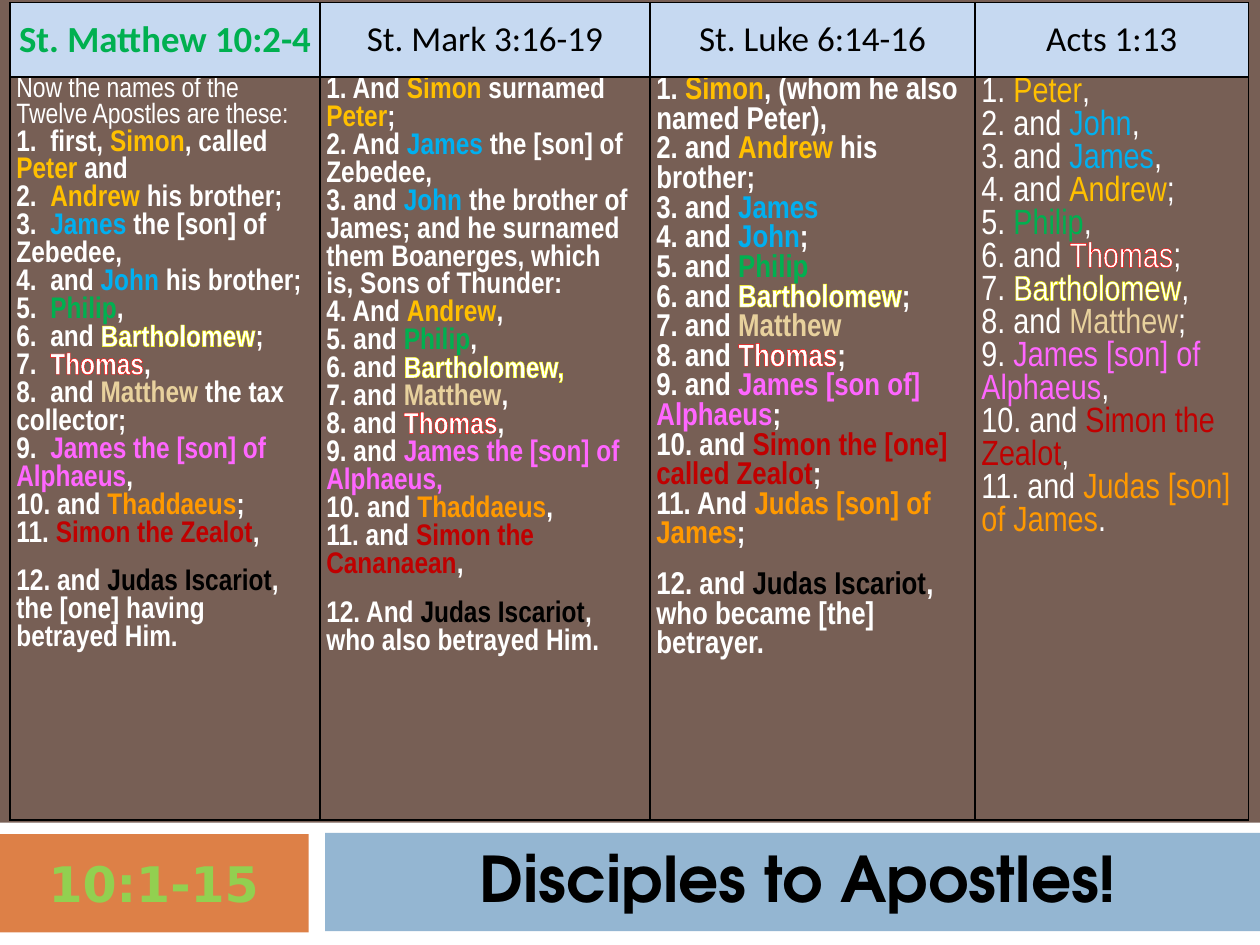
from lxml import etree
from pptx import Presentation
from pptx.dml.color import RGBColor
from pptx.enum import shapes, text
from pptx.oxml import ns
from pptx.util import Inches, Pt

THEME = {
    "background": "775F55", "band": "FFFFFF", "orange_bar": "DD8047", "blue_bar": "94B6D2",
    "header_fill": "C6D9F1", "border": "000000", "dark": "000000", "light": "FFFFFF",
    "lead": "00B050", "lead_outline": "3A5750", "verses": "92D050",
    "title_font": "TeX Gyre Adventor", "header_font": "Calibri",
    "list_font": "Arial Narrow", "verses_font": "DejaVu Sans",
    "title_size": 36, "verses_size": 28, "lead_size": 21, "header_size": 20, "intro_size": 16,
}

TITLE = "Disciples to Apostles!"
VERSES = "10:1-15"
INTRO = "Now the names of the Twelve Apostles are these:"

# (fill, outline, names)
APOSTLE_COLORS = [
    ("FFC000", "FFC000", ["Simon", "Peter", "Andrew"]),
    ("00B0F0", "00B0F0", ["James", "John"]),
    ("00B050", "00B050", ["Philip"]),
    ("FFFFFF", "FFFF00", ["Bartholomew"]),
    ("FFFFFF", "FF0000", ["Thomas"]),
    ("E8D19D", "E8D19D", ["Matthew"]),
    ("FF66FF", None, ["James the [son] of", "James [son of]", "James [son] of", "Alphaeus"]),
    ("FF9900", None, ["Thaddaeus", "Judas [son] of James"]),
    ("C00000", None, ["Simon the Zealot", "Simon the", "Cananaean",
                      "Simon the [one] called Zealot"]),
    ("000000", None, ["Judas Iscariot"]),
]
NAME_STYLE = {name: (fill, outline)
              for fill, outline, names in APOSTLE_COLORS for name in names}

# Braces mark an apostle's name; a leading # marks an automatically numbered line.
GOSPELS = [
    {"heading": "St. Matthew 10:2-4", "width": 2.46, "size": 17, "bold": True, "lines": [
        INTRO,
        "1.  first, {Simon}, called {Peter} and",
        "2.  {Andrew }his brother;",
        "3.  {James }the [son] of",
        "Zebedee,",
        "4.  and {John} his brother;",
        "5.  {Philip},",
        "6.  and {Bartholomew};",
        "#  {Thomas},",
        "#  and {Matthew }the tax",
        "collector;",
        "9.  {James the [son] of}",
        "{Alphaeus},",
        "10. and {Thaddaeus};",
        "11. {Simon the Zealot},",
        "12. and {Judas Iscariot}, the [one] having betrayed Him.",
    ]},
    {"heading": "St. Mark 3:16-19", "width": 2.62, "size": 17, "bold": True, "lines": [
        "1. And {Simon} surnamed",
        "{Peter};",
        "2. And {James} the [son] of",
        "Zebedee,",
        "3. and {John} the brother of",
        "James; and he surnamed",
        "them Boanerges, which",
        "is, Sons of Thunder:",
        "4. And {Andrew},",
        "5. and {Philip},",
        "6. and {Bartholomew,}",
        "7. and {Matthew},",
        "8. and {Thomas},",
        "9. and {James the [son] of}",
        "{Alphaeus,}",
        "10. and {Thaddaeus},",
        "11. and {Simon the}",
        "{Cananaean},",
        "12. And {Judas Iscariot},",
        "who also betrayed Him.",
    ]},
    {"heading": "St. Luke 6:14-16", "width": 2.58, "size": 18, "bold": True, "lines": [
        "1. {Simon}, (whom he also",
        "named Peter),",
        "2. and {Andrew} his brother;",
        "3. and {James}",
        "4. and {John};",
        "5. and {Philip}",
        "6. and {Bartholomew};",
        "7. and {Matthew}",
        "8. and {Thomas};",
        "9. and {James [son of]}",
        "{Alphaeus};",
        "10. and {Simon the [one] called Zealot};",
        "11. And {Judas [son] of James};",
        "12. and {Judas Iscariot}, who became [the] betrayer.",
    ]},
    {"heading": "Acts 1:13", "width": 2.17, "size": 20, "bold": False, "lines": [
        "1. {Peter},",
        "2. and {John},",
        "3. and {James},",
        "4. and {Andrew};",
        "5. {Philip},",
        "6. and {Thomas};",
        "7. {Bartholomew},",
        "8. and {Matthew};",
        "9. {James [son] of}",
        "{Alphaeus},",
        "10. and {Simon the Zealot},",
        "11. and {Judas [son] of James}.",
    ]},
]
ROW_HEIGHTS = [0.59, 5.9]
AUTO_NUMBER_START = 7


def rgb(color):
    return RGBColor.from_string(THEME.get(color, color))


def set_font(font, name, size, color, bold):
    font.name, font.size, font.bold = name, Pt(size), bold
    font.color.rgb = rgb(color)


def add_line(parent, tag, color, width, position=None):
    """Add a solid a:ln-type element, used for text outlines and cell borders."""
    line = etree.Element(ns.qn(tag), w=str(Pt(width)))
    fill = etree.SubElement(line, ns.qn("a:solidFill"))
    etree.SubElement(fill, ns.qn("a:srgbClr"), val=THEME.get(color, color))
    parent.insert(len(parent) if position is None else position, line)


def outline_run(run, color, width=0.75):
    add_line(run.font._element, "a:ln", color, width, 0)


def add_bar(slide, left, top, width, height, color):
    bar = slide.shapes.add_shape(shapes.MSO_SHAPE.RECTANGLE, *map(Inches, (left, top, width, height)))
    bar.shadow.inherit = False
    bar.fill.solid()
    bar.fill.fore_color.rgb = rgb(color)
    bar.line.fill.background()
    return bar


def format_cell(cell):
    cell.margin_left = cell.margin_right = Inches(0.05)
    cell.margin_top = cell.margin_bottom = 0
    cell.fill.background()
    for position, side in enumerate(("a:lnL", "a:lnR", "a:lnT", "a:lnB")):
        add_line(cell._tc.get_or_add_tcPr(), side, "border", 1, position)


def fill_heading(cell, heading, is_lead):
    cell.fill.solid()
    cell.fill.fore_color.rgb = rgb("header_fill")
    cell.vertical_anchor = text.MSO_ANCHOR.MIDDLE
    line = cell.text_frame.paragraphs[0]
    line.alignment = text.PP_ALIGN.CENTER
    run = line.add_run()
    run.text = heading
    set_font(run.font, THEME["header_font"], THEME["lead_size" if is_lead else "header_size"],
             "lead" if is_lead else "dark", is_lead)
    outline_run(run, "lead_outline" if is_lead else "dark")


def fill_list(cell, gospel):
    frame = cell.text_frame
    for number, content in enumerate(gospel["lines"]):
        line = frame.paragraphs[0] if number == 0 else frame.add_paragraph()
        is_intro = content == INTRO
        set_font(line.font, THEME["list_font"], THEME["intro_size"] if is_intro else gospel["size"],
                 "light", gospel["bold"] and not is_intro)
        if content.startswith("12."):
            line.space_before = Pt(12)
        if content.startswith("#"):
            etree.SubElement(line._p.get_or_add_pPr(), ns.qn("a:buAutoNum"),
                             type="arabicPeriod", startAt=str(AUTO_NUMBER_START))
            # the bullet precedes the default run properties in the schema
            props = line._p.pPr
            props.append(props.find(ns.qn("a:defRPr")))
        for part, words in enumerate(content.lstrip("#").replace("}", "{").split("{")):
            if not words:
                continue
            run = line.add_run()
            run.text = words
            fill, outline = NAME_STYLE[words.strip(" ,")] if part % 2 else ("light", None)
            set_font(run.font, line.font.name, line.font.size.pt, fill, line.font.bold)
            if outline:
                outline_run(run, outline)


def add_gospel_table(slide):
    widths = [gospel["width"] for gospel in GOSPELS]
    frame = slide.shapes.add_table(len(ROW_HEIGHTS), len(GOSPELS), Inches(0.08), Inches(0.02),
                                   Inches(sum(widths)), Inches(sum(ROW_HEIGHTS)))
    table = frame.table
    table.horz_banding = False
    for row, height in zip(table.rows, ROW_HEIGHTS):
        row.height = Inches(height)
    for index, gospel in enumerate(GOSPELS):
        table.columns[index].width = Inches(gospel["width"])
        heading, names = table.cell(0, index), table.cell(1, index)
        format_cell(heading)
        format_cell(names)
        fill_heading(heading, gospel["heading"], index == 0)
        fill_list(names, gospel)


def add_title(slide):
    title = slide.shapes.title
    title.left, title.top, title.width, title.height = map(Inches, (2.67, 6.61, 7.33, 0.71))
    slide.shapes._spTree.append(title._element)  # in front of the bars
    title.text_frame.text = TITLE
    title.text_frame.vertical_anchor = text.MSO_ANCHOR.MIDDLE
    line = title.text_frame.paragraphs[0]
    line.alignment = text.PP_ALIGN.CENTER
    set_font(line.runs[0].font, THEME["title_font"], THEME["title_size"], "dark", True)
    outline_run(line.runs[0], "dark", 0.9)


def main():
    deck = Presentation()
    deck.slide_width, deck.slide_height = Inches(10), Inches(7.5)
    slide = deck.slides.add_slide(deck.slide_layouts[5])
    slide.background.fill.solid()
    slide.background.fill.fore_color.rgb = rgb("background")
    add_bar(slide, 0, 6.53, 10, 0.97, "band")
    verses = add_bar(slide, -0.01, 6.62, 2.46, 0.78, "orange_bar")
    verses.text_frame.text = VERSES
    line = verses.text_frame.paragraphs[0]
    line.alignment = text.PP_ALIGN.CENTER
    set_font(line.font, THEME["verses_font"], THEME["verses_size"], "verses", True)
    add_bar(slide, 2.58, 6.61, 7.42, 0.78, "blue_bar")
    add_title(slide)
    add_gospel_table(slide)
    deck.save("out.pptx")


if __name__ == "__main__":
    main()
